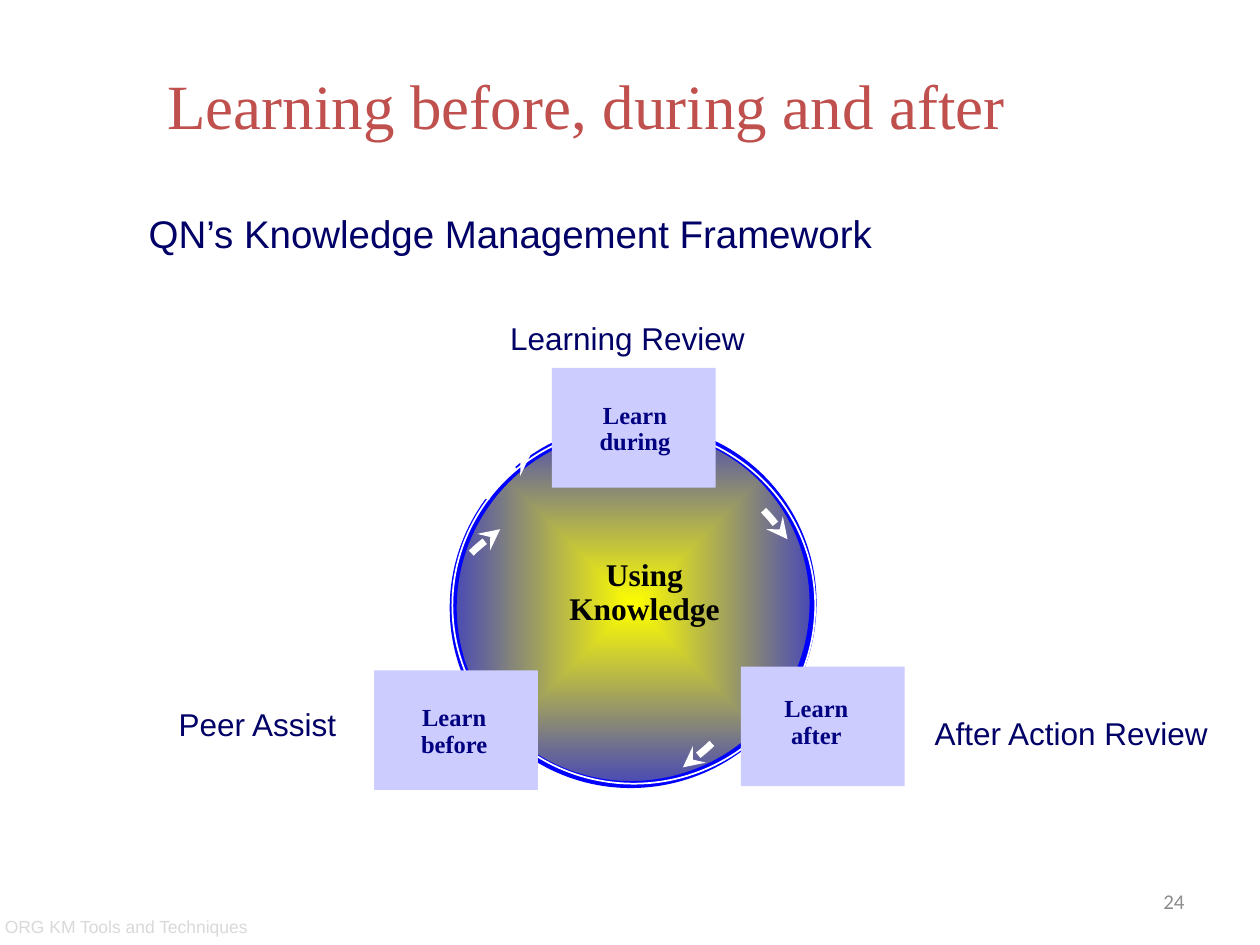
from lxml.etree import SubElement
from pptx import Presentation
from pptx.dml.color import RGBColor
from pptx.enum.shapes import MSO_SHAPE as Shape
from pptx.enum.text import MSO_ANCHOR as Anchor, MSO_AUTO_SIZE as AutoSize, PP_ALIGN as Align
from pptx.oxml import parse_xml
from pptx.oxml.ns import nsdecls, qn
from pptx.util import Inches, Pt

WHITE = RGBColor(0xFF, 0xFF, 0xFF)
BLACK = RGBColor(0, 0, 0)
BLUE = RGBColor(0, 0, 0xFF)
NAVY = RGBColor(0, 0, 0x66)
STEP_TEXT = RGBColor(0, 0, 0x80)
STEP_FILL = RGBColor(0xCC, 0xCC, 0xFF)
TITLE_RED = RGBColor(0xC0, 0x50, 0x4D)
NUMBER_GRAY = RGBColor(0x8C, 0x8C, 0x8C)
FOOTER_GRAY = RGBColor(0xD9, 0xD9, 0xD9)
SERIF = "Times New Roman"

GRADIENT = f"""<a:gradFill {nsdecls("a")} rotWithShape="0"><a:gsLst>
<a:gs pos="0"><a:srgbClr val="FFFF00"/></a:gs>
<a:gs pos="100000"><a:srgbClr val="0000FF"/></a:gs></a:gsLst>
<a:path path="shape"><a:fillToRect l="50000" t="50000" r="50000" b="50000"/></a:path>
</a:gradFill>"""

STEPS = [
    ("during", (4.38, 2.92), (4.4, 3.15, 1.28, 0.53)),
    ("after", (5.88, 5.29), (5.9, 5.48, 1.16, 0.53)),
    ("before", (2.97, 5.32), (2.97, 5.55, 1.27, 0.53)),
]
REVIEWS = [
    ("Learning Review", (3.95, 2.48, 2.08, 0.4)),
    ("After Action Review", (7.32, 5.62, 2.39, 0.4)),
    ("Peer Assist", (1.32, 5.55, 1.46, 0.4)),
]
UPPER_ARCS = [
    [(6.06, 4.05), (6.12, 4.11), (6.18, 4.19), (6.25, 4.28)],
    [(3.86, 3.96), (3.84, 3.92), (4, 3.76), (4.21, 3.61)],
]
LOWER_ARCS = [
    [(5.65, 5.9), (5.59, 5.96), (5.51, 6.02), (5.42, 6.09)],
    [(3.74, 4.39), (3.8, 4.33), (3.88, 4.27), (3.97, 4.2)],
]


def add_text(slide, box, lines, size, color, font="Arial", bold=False,
             align=Align.LEFT, spacing=None, inset=(0.1, 0.05), wrap=False):
    shape = slide.shapes.add_textbox(*map(Inches, box))
    frame = shape.text_frame
    frame.word_wrap = wrap
    frame.auto_size = AutoSize.SHAPE_TO_FIT_TEXT
    frame.margin_left = frame.margin_right = Inches(inset[0])
    frame.margin_top = frame.margin_bottom = Inches(inset[1])
    for index, line in enumerate(lines):
        paragraph = frame.add_paragraph() if index else frame.paragraphs[0]
        paragraph.alignment = align
        paragraph.line_spacing = spacing
        run = paragraph.add_run()
        run.text = line
        run.font.name = font
        run.font.size = Pt(size)
        run.font.bold = bold
        run.font.color.rgb = color
    return frame


def add_subtitle(slide):
    frame = add_text(slide, (0.97, 1.65, 6.07, 0.44), ["QN’s Knowledge Management Framework"],
                     22, NAVY, spacing=0.95, inset=(0.09, 0.04))
    paragraph = frame.paragraphs[0]
    paragraph.level = 1
    paragraph.space_after = Pt(5.4)
    properties = paragraph._p.get_or_add_pPr()
    properties.set("marL", str(Inches(0.5)))
    properties.set("indent", str(Inches(-0.38)))


def add_slide_number(slide):
    frame = add_text(slide, (7.17, 6.95, 2.33, 0.4), ["24"], 12, NUMBER_GRAY,
                     font="Calibri", align=Align.RIGHT, wrap=True)
    frame.auto_size = AutoSize.NONE
    frame.vertical_anchor = Anchor.MIDDLE


def add_ellipse(slide, box, line_color, line_width):
    ellipse = slide.shapes.add_shape(Shape.OVAL, *map(Inches, box))
    ellipse.shadow.inherit = False
    ellipse.fill.background()
    ellipse.line.color.rgb = line_color
    ellipse.line.width = Pt(line_width)
    return ellipse


def add_wheel(slide):
    wheel = add_ellipse(slide, (3.61, 3.37, 2.83, 2.87), BLUE, 4)
    wheel.rotation = 54
    properties = wheel._element.spPr
    properties.replace(properties.find(qn("a:noFill")), parse_xml(GRADIENT))


def curve_point(controls, t):
    weights = ((1 - t) ** 3, 3 * t * (1 - t) ** 2, 3 * t ** 2 * (1 - t), t ** 3)
    return tuple(Inches(sum(w * point[axis] for w, point in zip(weights, controls)))
                 for axis in (0, 1))


def add_arc_arrow(slide, controls, segments=6):
    points = [curve_point(controls, step / segments) for step in range(segments + 1)]
    builder = slide.shapes.build_freeform(*points[0])
    builder.add_line_segments(points[1:], close=False)
    arrow = builder.convert_to_shape()
    arrow.shadow.inherit = False
    arrow.fill.background()
    arrow.line.color.rgb = WHITE
    arrow.line.width = Pt(4)
    SubElement(arrow.line._get_or_add_ln(), qn("a:tailEnd"), type="stealth")


def add_step(slide, word, corner, text_box):
    card = slide.shapes.add_shape(Shape.RECTANGLE, *map(Inches, (*corner, 1.3, 0.95)))
    card.shadow.inherit = False
    card.fill.solid()
    card.fill.fore_color.rgb = STEP_FILL
    card.line.fill.background()
    add_text(slide, text_box, ["Learn", word], 14, STEP_TEXT, font=SERIF, bold=True,
             align=Align.CENTER, spacing=0.9, wrap=True)


def main():
    presentation = Presentation()
    presentation.slide_width = Inches(10)
    presentation.slide_height = Inches(7.5)
    slide = presentation.slides.add_slide(presentation.slide_layouts[6])

    add_text(slide, (-0.06, 7.22, 2.2, 0.27), ["ORG KM Tools and Techniques"], 10, FOOTER_GRAY)
    add_slide_number(slide)
    add_subtitle(slide)
    add_wheel(slide)
    for controls in UPPER_ARCS:
        add_arc_arrow(slide, controls)
    add_text(slide, (4.04, 4.4, 2.15, 0.62), ["Using", "Knowledge"], 18, BLACK, font=SERIF,
             bold=True, align=Align.CENTER, spacing=0.9, inset=(0.08, 0.04), wrap=True)
    add_ellipse(slide, (3.59, 3.39, 2.88, 2.83), WHITE, 1)
    for word, corner, text_box in STEPS:
        add_step(slide, word, corner, text_box)
    for controls in LOWER_ARCS:
        add_arc_arrow(slide, controls)
    for label, box in REVIEWS:
        add_text(slide, box, [label], 18, NAVY)
    add_text(slide, (1.24, 0.49, 6.83, 0.69), ["Learning before, during and after"],
             36, TITLE_RED, font=SERIF, inset=(0.09, 0.04))
    presentation.save("out.pptx")


if __name__ == "__main__":
    main()
